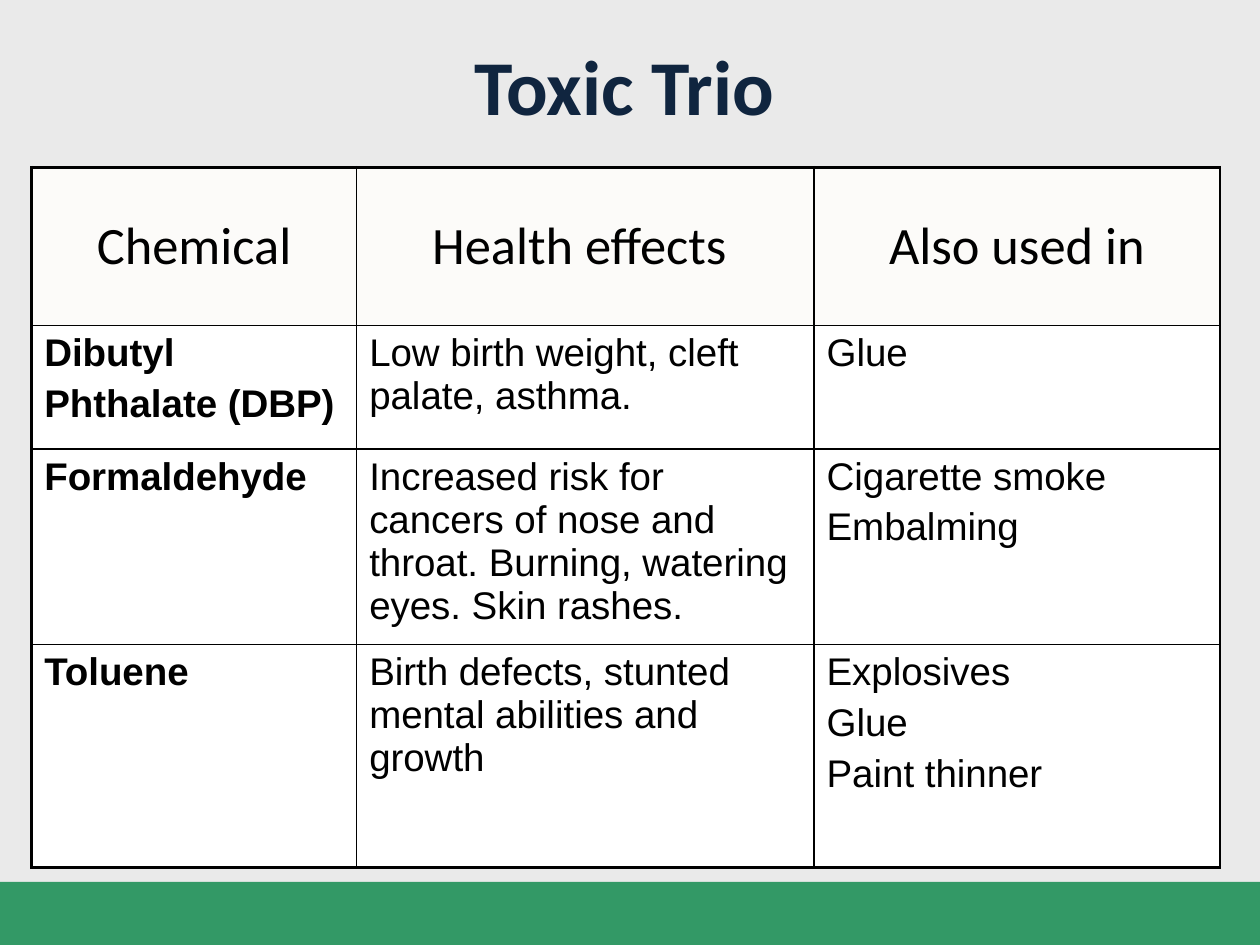
import pptx
import pptx.util
import pptx.dml.color
import pptx.enum.shapes
import pptx.enum.text
import pptx.oxml
import pptx.oxml.ns

Cm, Pt = pptx.util.Cm, pptx.util.Pt
ALIGN = pptx.enum.text.PP_ALIGN
ANCHOR = pptx.enum.text.MSO_ANCHOR

COLORS = {
    "background": "EAEAEA",
    "bar": "339966",
    "title": "10253F",
    "header": "FCFBF9",
    "body": "FFFFFF",
    "text": "000000",
    "border": "000000",
}
THIN, THICK = 1, 2.25

HEADERS = ["Chemical", "Health effects ", "Also used in"]
# Each cell is a list of paragraphs
CHEMICALS = [
    [["Dibutyl", "Phthalate (DBP)"],
     ["Low birth weight, cleft palate, asthma."],
     ["Glue"]],
    [["Formaldehyde"],
     ["Increased risk for cancers of nose and throat. "
      "Burning, watering eyes. Skin rashes."],
     ["Cigarette smoke", "Embalming"]],
    [["Toluene"],
     ["Birth defects, stunted mental abilities and growth"],
     ["Explosives", "Glue", "Paint thinner"]],
]


def rgb(name):
    return pptx.dml.color.RGBColor.from_string(COLORS[name])


class SlideBuilder:
    heading_font = "Calibri"
    body_font = "Arial"

    def __init__(self, prs):
        self.s = prs.slides.add_slide(prs.slide_layouts[5])
        fill = self.s.background.fill
        fill.solid()
        fill.fore_color.rgb = rgb("background")

    def add_text(self, tf, lines, font, size, color="text", bold=False,
                 align=ALIGN.LEFT):
        tf.word_wrap = True
        for i, line in enumerate(lines):
            p = tf.add_paragraph() if i else tf.paragraphs[0]
            p.alignment = align
            p.space_before = Pt(0.2 * size if i else 0)
            r = p.add_run()
            r.text = line
            r.font.name = font
            r.font.size = Pt(size)
            r.font.bold = bold
            r.font.color.rgb = rgb(color)

    def title(self, text, left, top, width, height):
        sp = self.s.shapes.title
        sp.left, sp.top, sp.width, sp.height = map(Cm, (left, top, width, height))
        sp.text_frame.auto_size = pptx.enum.text.MSO_AUTO_SIZE.NONE
        sp.text_frame.vertical_anchor = ANCHOR.TOP
        self.add_text(sp.text_frame, [text], self.heading_font, 44.3, "title", True)

    def bar(self, left, top, width, height):
        sp = self.s.shapes.add_shape(
            pptx.enum.shapes.MSO_SHAPE.RECTANGLE,
            *map(Cm, (left, top, width, height)))
        sp.shadow.inherit = False
        sp.fill.solid()
        sp.fill.fore_color.rgb = rgb("bar")
        sp.line.fill.background()

    def format_cell(self, cell, fill, widths):
        tcPr = cell._tc.get_or_add_tcPr()
        for side, width in widths.items():
            tcPr.append(pptx.oxml.parse_xml(
                f'<a:ln{side} {pptx.oxml.ns.nsdecls("a")} w="{int(Pt(width))}">'
                f'<a:solidFill><a:srgbClr val="{COLORS["border"]}"/></a:solidFill>'
                f'</a:ln{side}>'))
        cell.fill.solid()
        cell.fill.fore_color.rgb = rgb(fill)

    def table(self, headers, body, left, top, col_widths, row_heights):
        rows = [[[h] for h in headers]] + body
        table = self.s.shapes.add_table(
            len(rows), len(headers), Cm(left), Cm(top),
            Cm(sum(col_widths)), Cm(sum(row_heights))).table
        for col, width in zip(table.columns, col_widths):
            col.width = Cm(width)
        for row, height in zip(table.rows, row_heights):
            row.height = Cm(height)
        last = len(rows) - 1
        for i, row in enumerate(rows):
            for j, lines in enumerate(row):
                cell = table.cell(i, j)
                self.format_cell(cell, "body" if i else "header", {
                    "L": THIN if j else THICK,
                    "R": THIN,
                    "T": THIN if i else THICK,
                    "B": THICK if i == last else THIN,
                })
                if i:
                    self.add_text(cell.text_frame, lines, self.body_font, 22,
                                  bold=j == 0)
                else:
                    cell.vertical_anchor = ANCHOR.MIDDLE
                    self.add_text(cell.text_frame, lines, self.heading_font, 30,
                                  align=ALIGN.CENTER)


def main():
    prs = pptx.Presentation()
    prs.slide_width, prs.slide_height = Cm(25.4), Cm(19.05)
    slide = SlideBuilder(prs)

    # Footer bar
    slide.bar(0, 17.78, 25.4, 1.27)

    # Table of chemicals
    slide.table(HEADERS, CHEMICALS, 0.64, 3.38,
                [6.55, 9.22, 8.18], [3.18, 2.49, 3.94, 4.5])

    # Title
    slide.title("Toxic Trio", 9.32, 0.64, 10.16, 2.16)

    prs.save("out.pptx")


if __name__ == "__main__":
    main()
